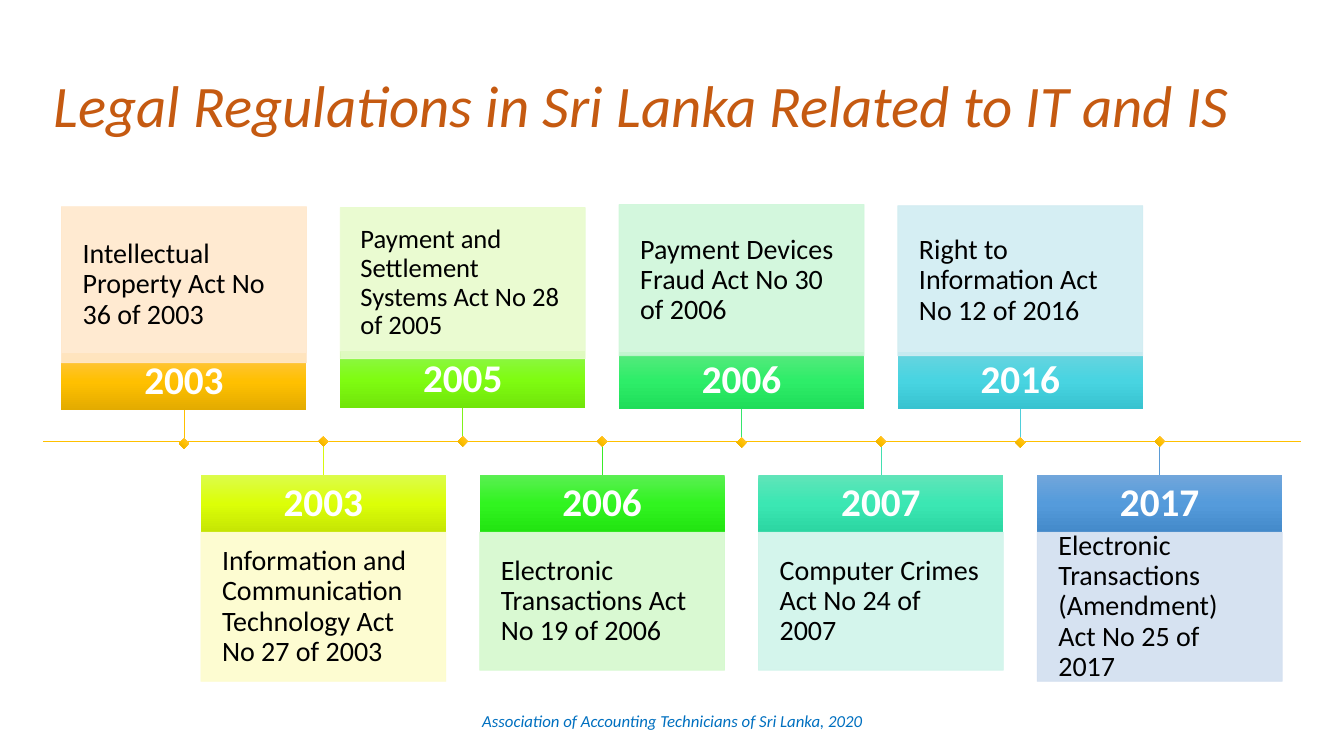
"""Draw a timeline of Sri Lankan laws on IT and IS."""
from copy import deepcopy
from dataclasses import dataclass

from lxml.etree import SubElement
from pptx import Presentation
from pptx.dml.color import RGBColor
from pptx.enum.shapes import MSO_CONNECTOR, MSO_SHAPE
from pptx.enum.text import MSO_ANCHOR, PP_ALIGN
from pptx.oxml.ns import qn
from pptx.util import Inches, Pt

FONT = "Calibri"
WHITE = RGBColor(0xFF, 0xFF, 0xFF)
BLACK = RGBColor(0x00, 0x00, 0x00)
RUST = RGBColor(0xC5, 0x5A, 0x11)
BLUE = RGBColor(0x00, 0x70, 0xC0)
GOLD = RGBColor(0xFF, 0xC0, 0x00)
AMBER = (RGBColor(0xFF, 0xC6, 0x4B), GOLD, RGBColor(0xE3, 0xAB, 0x00))
LIME = (RGBColor(0xDC, 0xFC, 0x4C), RGBColor(0xDC, 0xFF, 0x07), RGBColor(0xC5, 0xE5, 0x04))
LEAF = (RGBColor(0x8E, 0xF5, 0x4F), RGBColor(0x7F, 0xFC, 0x11), RGBColor(0x71, 0xE5, 0x0A))
GREEN = (RGBColor(0x5B, 0xEF, 0x53), RGBColor(0x31, 0xF4, 0x20), RGBColor(0x22, 0xE4, 0x11))
MINT = (RGBColor(0x59, 0xE9, 0x7E), RGBColor(0x2E, 0xED, 0x69), RGBColor(0x1F, 0xDD, 0x59))
TEAL = (RGBColor(0x61, 0xE4, 0xB9), RGBColor(0x3B, 0xE7, 0xB3), RGBColor(0x2C, 0xD6, 0xA2))
AQUA = (RGBColor(0x69, 0xD4, 0xDF), RGBColor(0x48, 0xD4, 0xE1), RGBColor(0x38, 0xC3, 0xD0))
STEEL = (RGBColor(0x71, 0xA6, 0xDB), RGBColor(0x55, 0x9B, 0xDB), RGBColor(0x44, 0x8A, 0xCA))

LEFT, STEP, WIDE = 0.61, 1.3825, 2.43
AXIS, BAR, STEM, DOT = 4.38, 0.57, 0.33, 0.07


@dataclass
class Law:
    year: str
    text: str
    top: float
    box_top: float
    box_high: float
    ramp: tuple[RGBColor, RGBColor, RGBColor]
    pale: RGBColor
    stem: RGBColor
    size: int = 20
    pad: float = 0.21


LAWS = [
    Law("2003", "Intellectual Property Act No 36 of 2003", 3.5, 2.05, 1.55,
        AMBER, RGBColor(0xFF, 0xE8, 0xCC), GOLD),
    Law("2003", "Information and Communication Technology Act No 27 of 2003", 4.71, 5.28, 1.48,
        LIME, RGBColor(0xFD, 0xFC, 0xCD), RGBColor(0xD7, 0xF8, 0x0E)),
    Law("2005", "Payment and Settlement Systems Act No 28 of 2005", 3.48, 2.06, 1.5,
        LEAF, RGBColor(0xE8, 0xFB, 0xCD), RGBColor(0x80, 0xF1, 0x1C), 19, 0.2),
    Law("2006", "Electronic Transactions Act No 19 of 2006", 4.71, 5.28, 1.37,
        GREEN, RGBColor(0xD5, 0xF9, 0xCE), RGBColor(0x39, 0xEB, 0x29)),
    Law("2006", "Payment Devices Fraud Act No 30 of 2006", 3.49, 2.03, 1.5,
        MINT, RGBColor(0xCF, 0xF7, 0xDA), RGBColor(0x36, 0xE5, 0x6C)),
    Law("2007", "Computer Crimes Act No 24 of 2007", 4.71, 5.28, 1.37,
        TEAL, RGBColor(0xD0, 0xF4, 0xEA), RGBColor(0x43, 0xDF, 0xB0)),
    Law("2016", "Right to Information Act No 12 of 2016", 3.49, 2.04, 1.49,
        AQUA, RGBColor(0xD1, 0xED, 0xF2), RGBColor(0x4F, 0xCE, 0xDA)),
    Law("2017", "Electronic Transactions (Amendment) Act No 25 of 2017", 4.71, 5.28, 1.48,
        STEEL, RGBColor(0xD2, 0xDF, 0xF0), RGBColor(0x5B, 0x9B, 0xD5)),
]


def write(shape, text: str, size: int, ink: RGBColor, align=PP_ALIGN.LEFT,
          pad: float | None = None, bold: bool = False, slant: bool = False,
          lead: float = 0.9) -> None:
    frame = shape.text_frame
    frame.word_wrap = True
    frame.vertical_anchor = MSO_ANCHOR.MIDDLE
    if pad is not None:
        frame.margin_left = frame.margin_right = Inches(pad)
        frame.margin_top = frame.margin_bottom = Inches(pad)
    line = frame.paragraphs[0]
    line.text = text
    line.alignment = align
    line.line_spacing = lead
    font = line.font
    font.name, font.size, font.bold, font.italic = FONT, Pt(size), bold, slant
    font.color.rgb = ink


def add_box(slide, x: float, y: float, wide: float, high: float):
    box = slide.shapes.add_shape(MSO_SHAPE.RECTANGLE, Inches(x), Inches(y),
                                 Inches(wide), Inches(high))
    box.shadow.inherit = False
    return box


def shade(box, ramp: tuple[RGBColor, RGBColor, RGBColor]) -> None:
    box.line.fill.background()
    box.fill.gradient()
    box.fill.gradient_angle = 270
    stops = box.element.spPr.find(qn("a:gradFill")).find(qn("a:gsLst"))
    stops.append(deepcopy(stops[0]))
    for stop, tint, place in zip(box.fill.gradient_stops, ramp, (0, 0.5, 1)):
        stop.color.rgb = tint
        stop.position = place


def wash(box, tint: RGBColor) -> None:
    box.fill.solid()
    box.fill.fore_color.rgb = tint
    box.line.color.rgb = tint
    box.line.width = Pt(0.5)
    for color in list(box.element.spPr.iter(qn("a:srgbClr"))):
        SubElement(color, qn("a:alpha")).set("val", "90000")


def add_line(slide, x1: float, y1: float, x2: float, y2: float, tint: RGBColor) -> None:
    line = slide.shapes.add_connector(MSO_CONNECTOR.STRAIGHT, Inches(x1), Inches(y1),
                                      Inches(x2), Inches(y2))
    line.line.color.rgb = tint
    line.line.width = Pt(0.5)
    SubElement(line.element.spPr, qn("a:effectLst"))


def add_law(slide, law: Law, x: float) -> None:
    bar = add_box(slide, x, law.top, WIDE, BAR)
    shade(bar, law.ramp)
    write(bar, law.year, 28, WHITE, PP_ALIGN.CENTER, 0.16, bold=True)
    box = add_box(slide, x, law.box_top, WIDE, law.box_high)
    wash(box, law.pale)
    write(box, law.text, law.size, BLACK, pad=law.pad)
    mid = x + WIDE / 2
    start = AXIS if law.top > AXIS else law.top + BAR
    add_line(slide, mid, start, mid, start + STEM, law.stem)
    joint = AXIS if law.top > AXIS else start + STEM
    dot = add_box(slide, mid - DOT / 2, joint - DOT / 2, DOT, DOT)
    dot.rotation = 45
    shade(dot, AMBER)


def main() -> None:
    deck = Presentation()
    deck.slide_width, deck.slide_height = Inches(13.33), Inches(7.5)
    slide = deck.slides.add_slide(deck.slide_layouts[5])
    title = slide.shapes.title
    title.left, title.top = Inches(0.43), Inches(0.35)
    title.width, title.height = Inches(12.48), Inches(1.45)
    write(title, "Legal Regulations in Sri Lanka Related to IT and IS", 42, RUST, slant=True)
    note = slide.shapes.add_textbox(Inches(4.42), Inches(6.95), Inches(4.5), Inches(0.4))
    write(note, "Association of Accounting Technicians of Sri Lanka, 2020", 12, BLUE,
          PP_ALIGN.CENTER, slant=True, lead=1.0)
    add_line(slide, 0.43, AXIS, 12.9, AXIS, GOLD)
    for rank, law in enumerate(LAWS):
        add_law(slide, law, LEFT + rank * STEP)
    deck.save("out.pptx")


if __name__ == "__main__":
    main()
